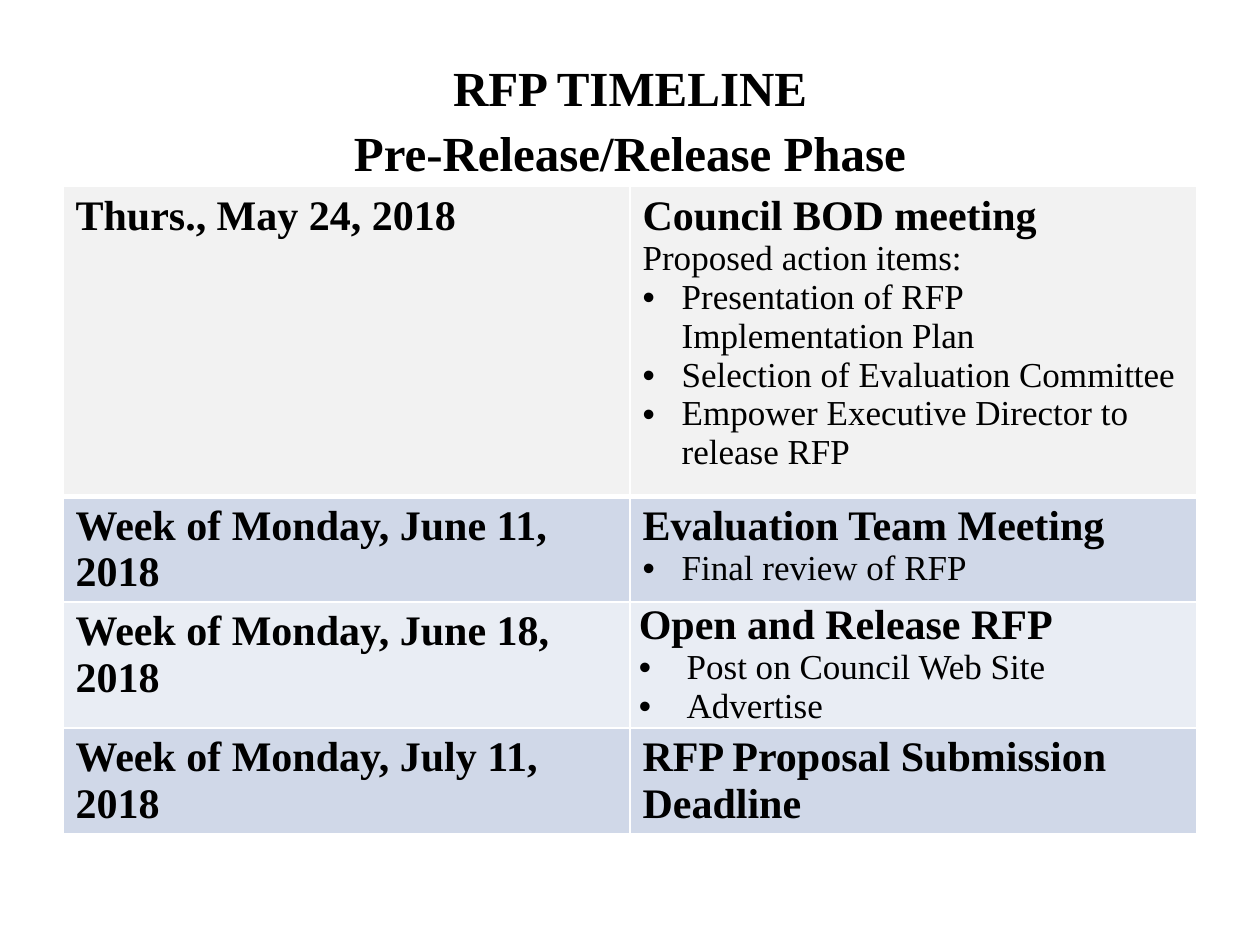
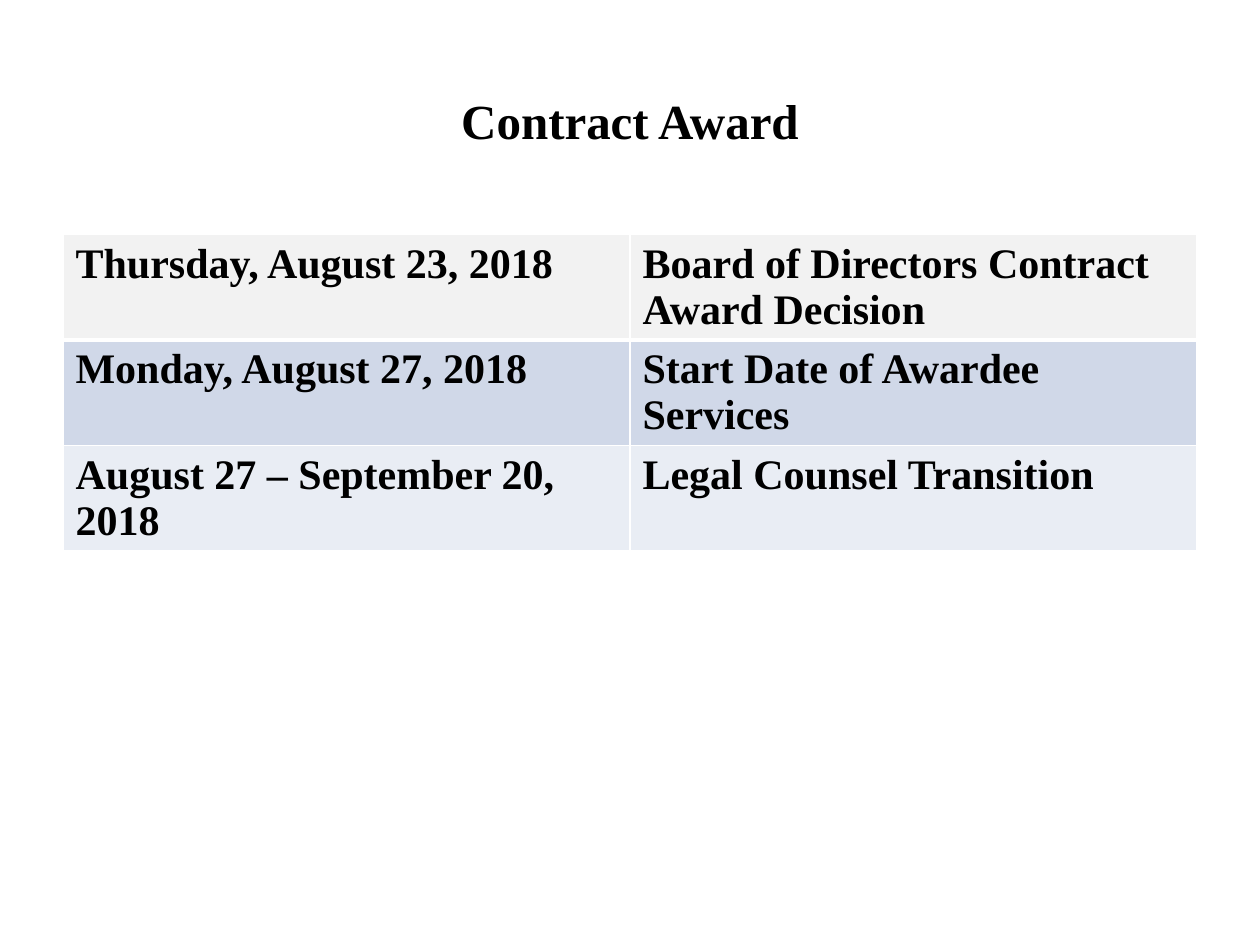
"""Build two slides that show the steps of an RFP schedule as tables."""
from lxml.etree import SubElement
from pptx import Presentation
from pptx.dml.color import RGBColor
from pptx.enum.text import MSO_ANCHOR, MSO_AUTO_SIZE, PP_ALIGN
from pptx.oxml.ns import qn
from pptx.util import Inches, Pt

FONT = "Times New Roman"
COLORS = {"text": "000000", "line": "FFFFFF", "head": "F2F2F2",
          "dark": "D0D8E8", "light": "E9EDF4"}
LEFT, WIDTH = 0.5, 9
ROW = 0.83

PHASE = [
    ("Thurs., May 24, 2018", "Council BOD meeting",
     ["Proposed action items:", "• Presentation of RFP Implementation Plan",
      "• Selection of Evaluation Committee",
      "• Empower Executive Director to release RFP"]),
    ("Week of Monday, June 11, 2018", "Evaluation Team Meeting",
     ["• Final review of RFP"]),
    ("Week of Monday, June 18, 2018", "Open and Release RFP",
     ["• Post on Council Web Site", "• Advertise"]),
    ("Week of Monday, July 11, 2018", "RFP Proposal Submission Deadline", []),
]
AWARD = [
    ("Thursday, August 23, 2018",
     "Board of Directors Contract Award Decision", []),
    ("Monday, August 27, 2018", "Start Date of Awardee Services", []),
    ("August 27 – September 20, 2018", "Legal Counsel Transition", []),
]


def style(para, size, bold):
    for run in para.runs:
        run.font.name = FONT
        run.font.size = Pt(size)
        run.font.bold = bold
        run.font.color.rgb = RGBColor.from_string(COLORS["text"])


def add_title(slide, text):
    title = slide.shapes.title
    title.left, title.top = Inches(LEFT), Inches(0.3)
    title.width, title.height = Inches(WIDTH), Inches(1.25)
    frame = title.text_frame
    frame.text = text
    frame.auto_size = MSO_AUTO_SIZE.NONE
    frame.vertical_anchor = MSO_ANCHOR.MIDDLE
    para = frame.paragraphs[0]
    para.alignment = PP_ALIGN.CENTER
    para.line_spacing = 1.1
    style(para, 28, True)


def add_bullet(para, indent):
    props = para._p.get_or_add_pPr()
    props.set("marL", str(Inches(indent)))
    props.set("indent", str(-Inches(indent)))
    SubElement(props, qn("a:buFont"), typeface="Arial")
    SubElement(props, qn("a:buChar"), char="•")


def set_edges(cell, top, bottom):
    props = cell._tc.get_or_add_tcPr()
    for side, width in zip("LRTB", (1, 1, top, bottom)):
        line = SubElement(props, qn(f"a:ln{side}"), w=str(Pt(width)))
        fill = SubElement(line, qn("a:solidFill"))
        SubElement(fill, qn("a:srgbClr"), val=COLORS["line"])


def fill_cell(cell, head, items, indent):
    frame = cell.text_frame
    frame.text = head
    style(frame.paragraphs[0], 24, True)
    for item in items:
        para = frame.add_paragraph()
        para.text = item.removeprefix("• ")
        style(para, 20, False)
        if item.startswith("•"):
            add_bullet(para, indent)


def add_table(slide, top, steps, heights, tight=None):
    frame = slide.shapes.add_table(len(steps), 2, Inches(LEFT), Inches(top),
                                   Inches(WIDTH), Inches(sum(heights)))
    table = frame.table
    table.first_row = table.horz_banding = False
    for num, (date, head, items) in enumerate(steps):
        table.rows[num].height = Inches(heights[num])
        shade = "head" if num == 0 else ("light", "dark")[num % 2]
        left, right = table.cell(num, 0), table.cell(num, 1)
        fill_cell(left, date, [], 0)
        fill_cell(right, head, items, 0.38 if num == tight else 0.31)
        if num == tight:
            right.margin_left = right.margin_right = Inches(0.07)
            right.margin_top = right.margin_bottom = 0
        for cell in (left, right):
            set_edges(cell, 3 if num == 1 else 1, 3 if num == 0 else 1)
            cell.fill.solid()
            cell.fill.fore_color.rgb = RGBColor.from_string(COLORS[shade])


def main():
    deck = Presentation()
    deck.slide_width, deck.slide_height = Inches(10), Inches(7.5)
    layout = deck.slide_layouts[5]

    slide = deck.slides.add_slide(layout)
    add_title(slide, "RFP TIMELINE\vPre-Release/Release Phase")
    add_table(slide, 1.48, PHASE, [2.46, ROW, 1, ROW], tight=2)

    slide = deck.slides.add_slide(layout)
    add_title(slide, "Contract Award")
    add_table(slide, 1.86, AWARD, [ROW] * len(AWARD))

    deck.save("out.pptx")


if __name__ == "__main__":
    main()
